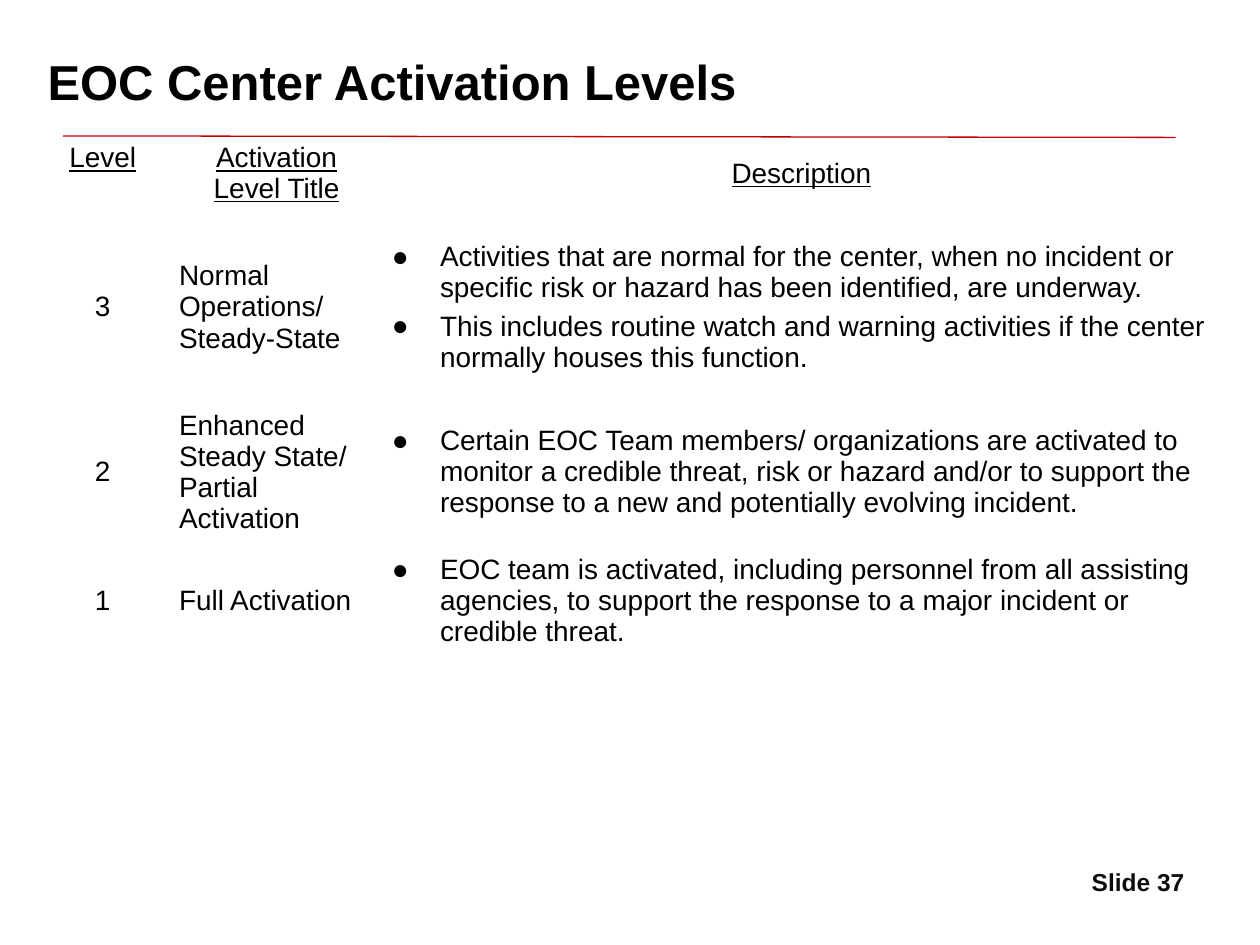
from dataclasses import dataclass

from lxml import etree
from pptx import Presentation
from pptx.dml.color import RGBColor
from pptx.enum.shapes import MSO_CONNECTOR
from pptx.enum.text import MSO_ANCHOR, PP_ALIGN
from pptx.oxml.ns import qn
from pptx.util import Cm, Pt

STRAIGHT = MSO_CONNECTOR.STRAIGHT
TOP, MIDDLE = MSO_ANCHOR.TOP, MSO_ANCHOR.MIDDLE
LEFT, CENTER, RIGHT = PP_ALIGN.LEFT, PP_ALIGN.CENTER, PP_ALIGN.RIGHT
FONT = "Arial"
COLORS = {"text": "000000", "footer": "0D0D0D", "rule": "C00000", "white": "FFFFFF"}
COLUMN_WIDTHS = (2.72, 4.29, 16.87)
ROW_HEIGHTS = (0.97, 4.14, 1.78, 2.67)


@dataclass(frozen=True)
class Label:
    text: str
    left: float
    top: float
    width: float
    height: float
    size: int
    color: str
    align: PP_ALIGN
    anchor: MSO_ANCHOR


@dataclass(frozen=True)
class CellStyle:
    align: PP_ALIGN = LEFT
    anchor: MSO_ANCHOR = MIDDLE
    space: float = 4.8
    underline: bool = False
    bullet: str = ""
    bottom_border: float = 1


@dataclass(frozen=True)
class ActivationLevel:
    number: str
    title: str
    description: tuple[str, ...]


LABELS = (
    Label("EOC Center Activation Levels", 0.71, 0.74, 23.57, 1.78, 28, "text", LEFT, MIDDLE),
    Label("Slide 37", 18.21, 17.35, 5.92, 1.32, 14, "footer", RIGHT, TOP),
)
HEADING = CellStyle(CENTER, TOP, 0, True, bottom_border=3)
DESCRIPTION_HEADING = CellStyle(CENTER, underline=True, bottom_border=3)
NUMBER = CellStyle(CENTER)
TITLE = CellStyle()
DESCRIPTION = CellStyle(space=2, bullet="●")
HEADINGS = (
    ("Level", HEADING),
    ("Activation Level Title", HEADING),
    ("Description", DESCRIPTION_HEADING),
)
LEVELS = (
    ActivationLevel("3", "Normal Operations/ Steady-State", (
        "Activities that are normal for the center, when no incident or specific risk "
        "or hazard has been identified, are underway.",
        "This includes routine watch and warning activities if the center normally "
        "houses this function.",
    )),
    ActivationLevel("2", "Enhanced Steady State/ Partial Activation", (
        "Certain EOC Team members/ organizations are activated to monitor a credible "
        "threat, risk or hazard and/or to support the response to a new and potentially "
        "evolving incident.",
    )),
    ActivationLevel("1", "Full Activation", (
        "EOC team is activated, including personnel from all assisting agencies, to "
        "support the response to a major incident or credible threat.",
    )),
)


def rgb(name: str) -> RGBColor:
    return RGBColor.from_string(COLORS[name])


def add_span(para, text: str, size: int, color: str, bold=False, underline=False) -> None:
    span = para.add_run()
    span.text = text
    span.font.name = FONT
    span.font.size = Pt(size)
    span.font.bold = bold
    span.font.underline = underline
    span.font.color.rgb = rgb(color)


def add_label(page, label: Label) -> None:
    box = page.shapes.add_textbox(
        Cm(label.left), Cm(label.top), Cm(label.width), Cm(label.height))
    frame = box.text_frame
    frame.word_wrap = True
    frame.vertical_anchor = label.anchor
    para = frame.paragraphs[0]
    para.alignment = label.align
    add_span(para, label.text, label.size, label.color, bold=True)


def add_rule(page) -> None:
    rule = page.shapes.add_connector(STRAIGHT, Cm(1.27), Cm(2.74), Cm(23.7), Cm(2.77))
    rule.line.color.rgb = rgb("rule")
    rule.line.width = Pt(0.75)
    etree.SubElement(rule._element.spPr, qn("a:effectLst"))


def add_bullet(para, mark: str) -> None:
    properties = para._p.get_or_add_pPr()
    properties.set("marL", str(Cm(0.97)))
    properties.set("indent", str(-Cm(0.97)))
    etree.SubElement(properties, qn("a:buFont"), typeface=FONT)
    etree.SubElement(properties, qn("a:buChar"), char=mark)


def add_borders(cell, bottom: float) -> None:
    properties = cell._tc.get_or_add_tcPr()
    widths = {"lnL": 1, "lnR": 1, "lnT": 1, "lnB": bottom}
    for index, (side, width) in enumerate(widths.items()):
        line = etree.Element(qn(f"a:{side}"), w=str(Pt(width)))
        fill = etree.SubElement(line, qn("a:solidFill"))
        etree.SubElement(fill, qn("a:srgbClr"), val=COLORS["white"])
        properties.insert(index, line)


def fill_cell(cell, texts: tuple[str, ...], style: CellStyle) -> None:
    cell.margin_left = cell.margin_right = Cm(0.18)
    cell.margin_top = cell.margin_bottom = 0
    cell.vertical_anchor = style.anchor
    cell.fill.solid()
    cell.fill.fore_color.rgb = rgb("white")
    add_borders(cell, style.bottom_border)
    frame = cell.text_frame
    for index, text in enumerate(texts):
        para = frame.add_paragraph() if index else frame.paragraphs[0]
        if style.bullet:
            add_bullet(para, style.bullet)
        para.alignment = style.align
        para.space_before = Pt(style.space if index else 0)
        para.space_after = Pt(style.space)
        add_span(para, text, 16, "text", underline=style.underline)


def add_level_table(page) -> None:
    table = page.shapes.add_table(
        len(ROW_HEIGHTS), len(COLUMN_WIDTHS), Cm(0.71), Cm(2.87),
        Cm(sum(COLUMN_WIDTHS)), Cm(sum(ROW_HEIGHTS))).table
    table.first_row = False
    table.horz_banding = False
    for column, width in zip(table.columns, COLUMN_WIDTHS):
        column.width = Cm(width)
    for row, height in zip(table.rows, ROW_HEIGHTS):
        row.height = Cm(height)
    for column, (text, style) in enumerate(HEADINGS):
        fill_cell(table.cell(0, column), (text,), style)
    for row, level in enumerate(LEVELS, start=1):
        fill_cell(table.cell(row, 0), (level.number,), NUMBER)
        fill_cell(table.cell(row, 1), (level.title,), TITLE)
        fill_cell(table.cell(row, 2), level.description, DESCRIPTION)


def main() -> None:
    deck = Presentation()
    deck.slide_width, deck.slide_height = Cm(25.4), Cm(19.05)
    page = deck.slides.add_slide(deck.slide_layouts[6])
    add_rule(page)
    add_level_table(page)
    for label in LABELS:
        add_label(page, label)
    deck.save("out.pptx")


if __name__ == "__main__":
    main()
